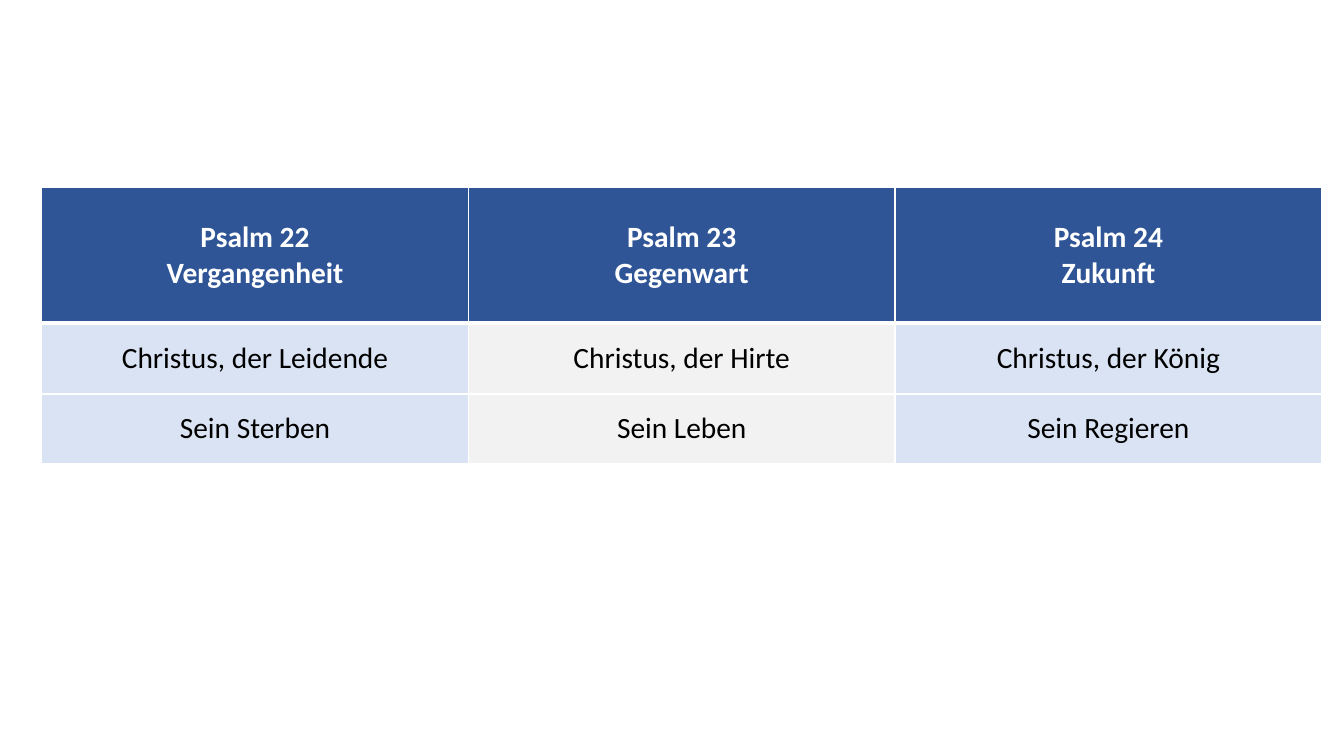
from pptx import Presentation
from pptx.dml.color import RGBColor
from pptx.enum.text import MSO_ANCHOR as Anchor, PP_ALIGN as Align
from pptx.oxml.ns import qn
from pptx.util import Pt
from lxml.etree import SubElement

PSALMS = [
    ("Psalm 22\nVergangenheit", "Christus, der Leidende", "Sein Sterben"),
    ("Psalm 23\nGegenwart", "Christus, der Hirte", "Sein Leben"),
    ("Psalm 24\nZukunft", "Christus, der König", "Sein Regieren"),
]
COLUMN_FILLS = ["DAE3F3", "F2F2F2", "DAE3F3"]
ROW_HEIGHTS = [96.5, 51, 49.8]
COLUMN_WIDTH = 304.8
HEADER_FILL, WHITE, BLACK = "2F5597", "FFFFFF", "000000"


def color(hex_code):
    """Turn a hex string into a colour."""
    return RGBColor.from_string(hex_code)


def add_borders(cell, top, bottom):
    """Draw white cell borders with the given top and bottom widths."""
    properties = cell._tc.get_or_add_tcPr()
    for side, width in (("L", 1), ("R", 1), ("T", top), ("B", bottom)):
        border = SubElement(properties, qn(f"a:ln{side}"), w=str(Pt(width)))
        line_fill = SubElement(border, qn("a:solidFill"))
        SubElement(line_fill, qn("a:srgbClr"), val=WHITE)


def fill_cell(cell, wording, fill, font_color, bold):
    """Write centred text into a cell and colour it."""
    cell.fill.solid()
    cell.fill.fore_color.rgb = color(fill)
    cell.vertical_anchor = Anchor.MIDDLE
    cell.margin_left = cell.margin_right = Pt(10)
    cell.margin_top = cell.margin_bottom = Pt(0)
    cell.text_frame.text = wording
    for paragraph in cell.text_frame.paragraphs:
        paragraph.alignment = Align.CENTER
        for run in paragraph.runs:
            run.font.name = "Calibri"
            run.font.size = Pt(21)
            run.font.bold = bold
            run.font.color.rgb = color(font_color)


def add_psalm_table(slide):
    """Add the table that sets the three psalms side by side."""
    table = slide.shapes.add_table(
        len(ROW_HEIGHTS), len(PSALMS), Pt(29.8), Pt(134),
        Pt(COLUMN_WIDTH * len(PSALMS)), Pt(sum(ROW_HEIGHTS))).table
    for row, height in zip(table.rows, ROW_HEIGHTS):
        row.height = Pt(height)
    for column, (psalm, column_fill) in enumerate(zip(PSALMS, COLUMN_FILLS)):
        table.columns[column].width = Pt(COLUMN_WIDTH)
        for row, wording in enumerate(psalm):
            cell = table.cell(row, column)
            header = row == 0
            add_borders(cell, 3 if row == 1 else 1, 3 if header else 1)
            fill_cell(cell, wording, HEADER_FILL if header else column_fill,
                      WHITE if header else BLACK, header)


def main():
    """Build the slide and save it."""
    presentation = Presentation()
    presentation.slide_width, presentation.slide_height = Pt(960), Pt(540)
    slide = presentation.slides.add_slide(presentation.slide_layouts[6])
    add_psalm_table(slide)
    presentation.save("out.pptx")


if __name__ == "__main__":
    main()
